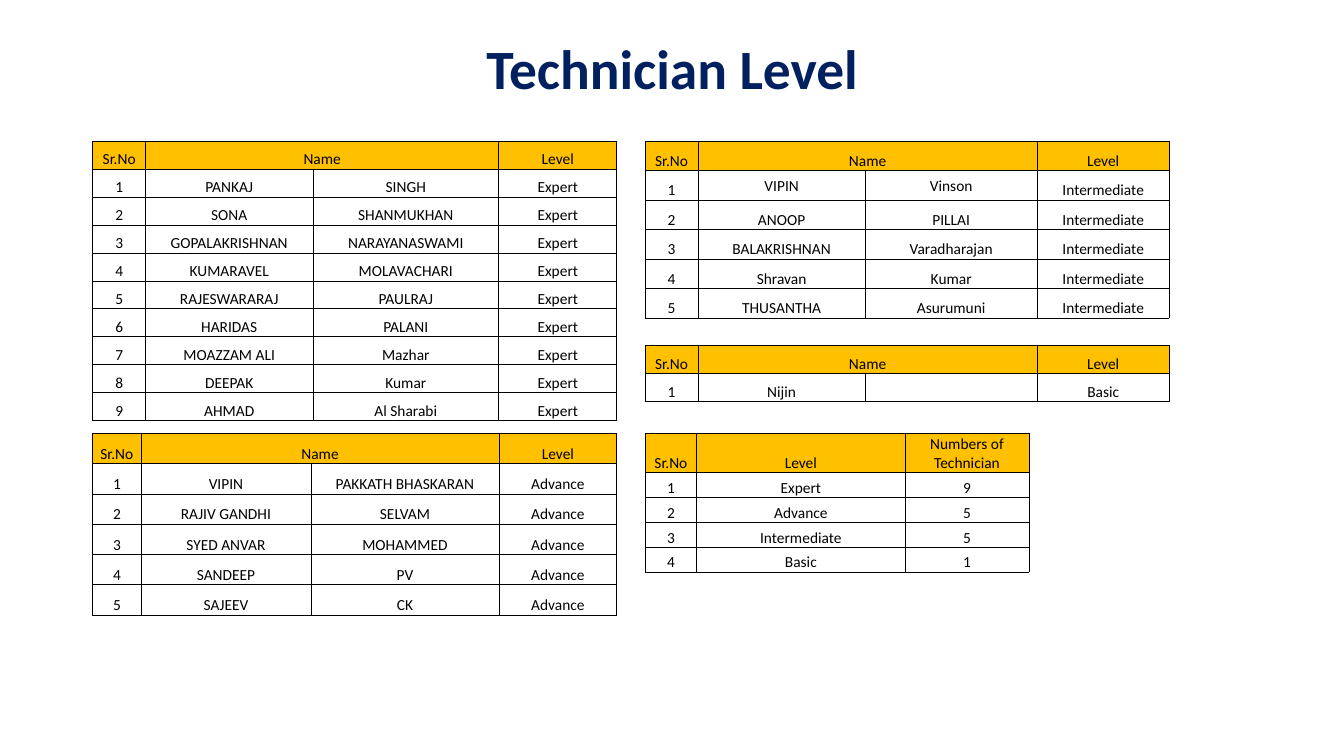
from lxml.etree import SubElement
from pptx import Presentation
from pptx.dml.color import RGBColor
from pptx.enum.text import MSO_ANCHOR, PP_ALIGN
from pptx.oxml.ns import qn
from pptx.util import Inches, Pt

NAVY = RGBColor(0x00, 0x20, 0x60)
AMBER = RGBColor(0xFF, 0xC0, 0x00)
BLACK = RGBColor(0x00, 0x00, 0x00)

# Grid: 100 columns by 100 rows over the slide
LEFT, RIGHT = 6.9, 48
UPPER, MID, LOWER = 18.67, 45.73, 57.33
NAMES = ["Sr.No", "Name", "", "Level"]


class Board:
    font = "Calibri"
    size = 11

    def __init__(self, deck):
        self.slide = deck.slides.add_slide(deck.slide_layouts[5])
        self.col = deck.slide_width / 100
        self.row = deck.slide_height / 100

    def x(self, cols):
        return round(cols * self.col)

    def y(self, rows):
        return round(rows * self.row)

    def label(self, para, text, size, color, bold=False):
        para.alignment = PP_ALIGN.CENTER
        run = para.add_run()
        run.text = text
        font = run.font
        font.name, font.size, font.bold = self.font, Pt(size), bold
        font.color.rgb = color

    def title(self, text, left, top, width, height):
        box = self.slide.shapes.title
        box.left, box.top = self.x(left), self.y(top)
        box.width, box.height = self.x(width), self.y(height)
        frame = box.text_frame
        frame.word_wrap = True
        frame.vertical_anchor = MSO_ANCHOR.BOTTOM
        frame.margin_bottom = Inches(0.1)
        para = frame.paragraphs[0]
        para.line_spacing = 0.9
        self.label(para, text, 39.6, NAVY, True)

    def border(self, cell):
        props = cell._tc.get_or_add_tcPr()
        for side in ("lnL", "lnR", "lnT", "lnB"):
            line = SubElement(props, qn(f"a:{side}"), w=str(Pt(0.5)))
            fill = SubElement(line, qn("a:solidFill"))
            SubElement(fill, qn("a:srgbClr"), val=str(BLACK))

    def cell(self, cell, text, head):
        cell.margin_left = cell.margin_right = cell.margin_top = Inches(0.01)
        cell.margin_bottom = 0
        cell.vertical_anchor = MSO_ANCHOR.BOTTOM
        self.border(cell)
        if head:
            cell.fill.solid()
            cell.fill.fore_color.rgb = AMBER
        else:
            cell.fill.background()
        para = cell.text_frame.paragraphs[0]
        if text:
            self.label(para, text, self.size, BLACK)
        else:
            SubElement(para._p, qn("a:endParaRPr"), sz=str(self.size * 100))

    def table(self, left, top, widths, high, head, body, first=None):
        rows = [head] + body
        highs = [first or high] + [high] * len(body)
        grid = self.slide.shapes.add_table(
            len(rows), len(widths), self.x(left), self.y(top),
            self.x(sum(widths)), self.y(sum(highs))).table
        grid.first_row = grid.horz_banding = False
        for col, width in zip(grid.columns, widths):
            col.width = self.x(width)
        for r, texts in enumerate(rows):
            grid.rows[r].height = self.y(highs[r])
            for c, text in enumerate(texts):
                self.cell(grid.cell(r, c), text, r == 0)
        if "" in head:
            gap = head.index("")
            grid.cell(0, gap - 1).merge(grid.cell(0, gap))
        return grid


def staff(level, people):
    return [[str(n), *name, level] for n, name in enumerate(people, 1)]


EXPERT = staff("Expert", [
    ("PANKAJ", "SINGH"), ("SONA", "SHANMUKHAN"),
    ("GOPALAKRISHNAN", "NARAYANASWAMI"), ("KUMARAVEL", "MOLAVACHARI"),
    ("RAJESWARARAJ", "PAULRAJ"), ("HARIDAS", "PALANI"),
    ("MOAZZAM ALI", "Mazhar"), ("DEEPAK", "Kumar"), ("AHMAD", "Al Sharabi")])
ADVANCE = staff("Advance", [
    ("VIPIN", "PAKKATH BHASKARAN"), ("RAJIV GANDHI", "SELVAM"),
    ("SYED ANVAR", "MOHAMMED"), ("SANDEEP", "PV"), ("SAJEEV", "CK")])
MEDIUM = staff("Intermediate", [
    ("VIPIN", "Vinson"), ("ANOOP", "PILLAI"),
    ("BALAKRISHNAN", "Varadharajan"), ("Shravan", "Kumar"),
    ("THUSANTHA", "Asurumuni")])
BASIC = staff("Basic", [("Nijin", "")])


def main():
    deck = Presentation()
    deck.slide_width, deck.slide_height = Inches(13.33), Inches(7.5)
    board = Board(deck)
    board.title("Technician Level", LEFT, 12.4, 86.25, 2.4)

    # Left side: experts and advanced staff
    board.table(LEFT, UPPER, [3.94, 12.44, 13.84, 8.78], 3.7, NAMES, EXPERT)
    board.table(LEFT, LOWER, [3.6, 12.64, 14, 8.76], 4, NAMES, ADVANCE)

    # Right side: intermediate and basic staff
    widths = [3.94, 12.44, 12.8, 9.82]
    medium = board.table(RIGHT, UPPER, widths, 3.9, NAMES, MEDIUM)
    for c in (1, 2):
        medium.cell(1, c).vertical_anchor = MSO_ANCHOR.MIDDLE
    board.table(RIGHT, MID, widths, 3.7, NAMES, BASIC)

    # Head count for each level
    groups = [EXPERT, ADVANCE, MEDIUM, BASIC]
    count = [[str(n), group[0][-1], str(len(group))]
             for n, group in enumerate(groups, 1)]
    board.table(RIGHT, LOWER, [3.84, 15.5, 9.23], 3.3,
                ["Sr.No", "Level", "Numbers of Technician"], count, 2.8)

    deck.save("out.pptx")


if __name__ == "__main__":
    main()
